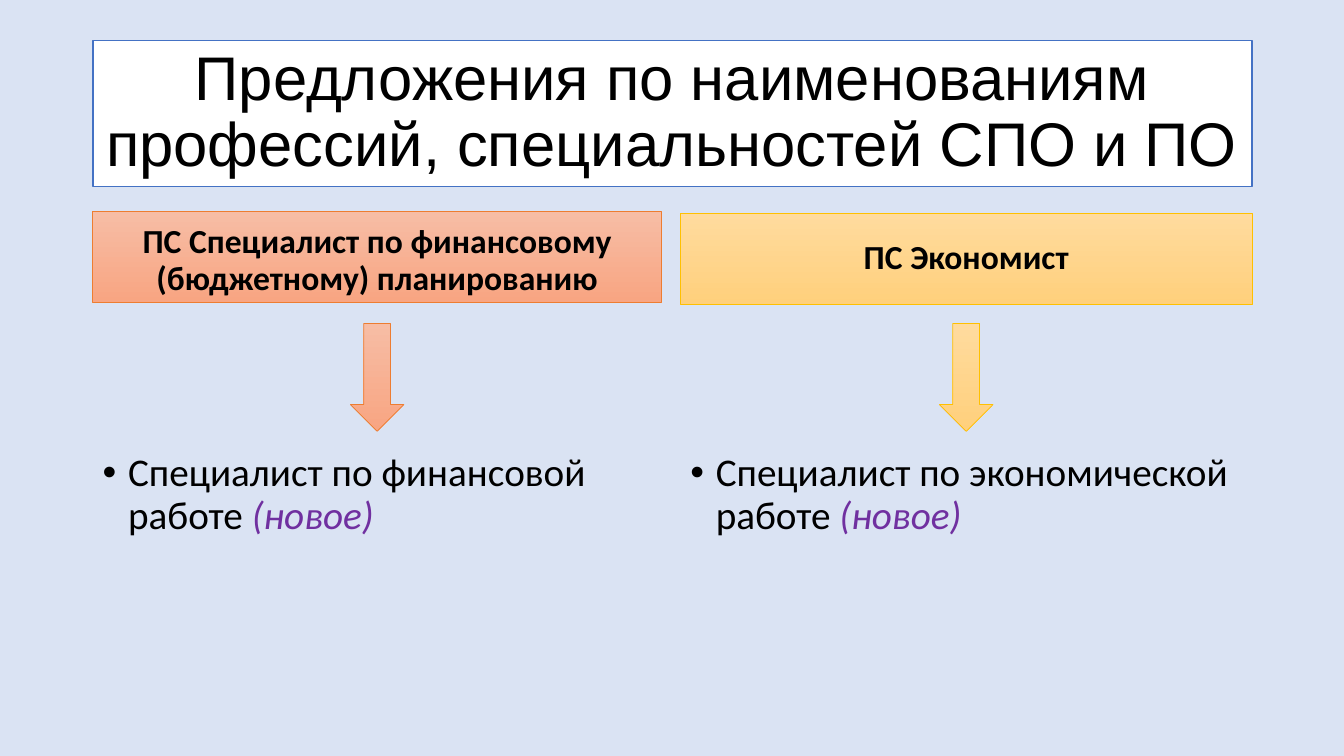
from lxml import etree
from pptx import Presentation
from pptx.dml.color import RGBColor
from pptx.enum import shapes, text
from pptx.oxml import ns
from pptx.util import Cm, Pt

BACKGROUND = RGBColor(0xDA, 0xE3, 0xF3)
WHITE = RGBColor(0xFF, 0xFF, 0xFF)
BLACK = RGBColor(0x00, 0x00, 0x00)
BLUE = RGBColor(0x44, 0x72, 0xC4)
PURPLE = RGBColor(0x70, 0x30, 0xA0)
ORANGE = RGBColor(0xED, 0x7D, 0x31)
ORANGE_TINTS = (RGBColor(0xF7, 0xBD, 0xA5), RGBColor(0xF8, 0xA5, 0x82))
GOLD = RGBColor(0xFF, 0xC0, 0x00)
GOLD_TINTS = (RGBColor(0xFF, 0xDB, 0x9E), RGBColor(0xFF, 0xD0, 0x7C))

HEADER_HEIGHT = Cm(2.29)
ARROW_WIDTH, ARROW_HEIGHT = Cm(1.35), Cm(2.72)
LIST_HEIGHT = Cm(8.84)


def format_run(run, size, name="Calibri", color=BLACK, bold=False, italic=False):
    run.font.size = Pt(size)
    run.font.name = name
    run.font.color.rgb = color
    run.font.bold = bold
    run.font.italic = italic


def add_title(slide, left, top, width, height):
    title = slide.shapes.title
    title.left, title.top, title.width, title.height = left, top, width, height
    title.fill.solid()
    title.fill.fore_color.rgb = WHITE
    title.line.color.rgb = BLUE
    title.line.width = Pt(1)
    frame = title.text_frame
    frame.text = "Предложения по наименованиям профессий, специальностей СПО и ПО"
    frame.auto_size = text.MSO_AUTO_SIZE.NONE
    frame.word_wrap = True
    frame.vertical_anchor = text.MSO_ANCHOR.MIDDLE
    heading = frame.paragraphs[0]
    heading.alignment = text.PP_ALIGN.CENTER
    heading.line_spacing = 0.9
    format_run(heading.runs[0], 44, "Arial")


def add_gradient_shape(slide, preset, box, tints, outline):
    shape = slide.shapes.add_shape(preset, *box)
    shape.shadow.inherit = False
    shape.fill.gradient()
    shape.fill.gradient_angle = 270
    for stop, tint in zip(shape.fill.gradient_stops, tints):
        stop.color.rgb = tint
    shape.line.color.rgb = outline
    shape.line.width = Pt(0.5)
    return shape


def add_profession_list(slide, left, top, width, profession):
    frame = slide.shapes.add_textbox(left, top, width, LIST_HEIGHT).text_frame
    frame.word_wrap = True
    frame.margin_top = Cm(3.05)
    entry = frame.paragraphs[0]
    entry.text = profession + " "
    entry.line_spacing = 0.9
    format_run(entry.runs[0], 28)
    status = entry.add_run()
    status.text = "(новое)"
    format_run(status, 28, color=PURPLE, italic=True)
    properties = entry._p.get_or_add_pPr()
    properties.set("marL", str(Cm(0.64)))
    properties.set("indent", str(-Cm(0.64)))
    etree.SubElement(properties, ns.qn("a:buFont"), typeface="Arial")
    etree.SubElement(properties, ns.qn("a:buChar"), char="•")


def add_standard(slide, left, top, width, standard, profession, anchor, tints, outline):
    header = add_gradient_shape(slide, shapes.MSO_SHAPE.RECTANGLE,
                                (left, top, width, HEADER_HEIGHT), tints, outline)
    header.text_frame.text = standard
    header.text_frame.vertical_anchor = anchor
    label = header.text_frame.paragraphs[0]
    label.alignment = text.PP_ALIGN.CENTER
    label.line_spacing = 0.9
    format_run(label.runs[0], 24, bold=True)

    add_profession_list(slide, left, Cm(8.36), width, profession)

    arrow_left = left + (width - ARROW_WIDTH) // 2
    add_gradient_shape(slide, shapes.MSO_SHAPE.DOWN_ARROW,
                       (arrow_left, Cm(8.15), ARROW_WIDTH, ARROW_HEIGHT), tints, outline)


def main():
    presentation = Presentation()
    presentation.slide_width, presentation.slide_height = Cm(33.87), Cm(19.05)
    slide = presentation.slides.add_slide(presentation.slide_layouts[5])
    slide.background.fill.solid()
    slide.background.fill.fore_color.rgb = BACKGROUND

    add_title(slide, Cm(2.34), Cm(1.02), Cm(29.21), Cm(3.68))
    add_standard(slide, Cm(2.34), Cm(5.33), Cm(14.33),
                 "ПС Специалист по финансовому (бюджетному) планированию",
                 "Специалист по финансовой работе",
                 text.MSO_ANCHOR.BOTTOM, ORANGE_TINTS, ORANGE)
    add_standard(slide, Cm(17.15), Cm(5.38), Cm(14.4),
                 "ПС Экономист",
                 "Специалист по экономической работе",
                 text.MSO_ANCHOR.MIDDLE, GOLD_TINTS, GOLD)
    presentation.save("out.pptx")


if __name__ == "__main__":
    main()
